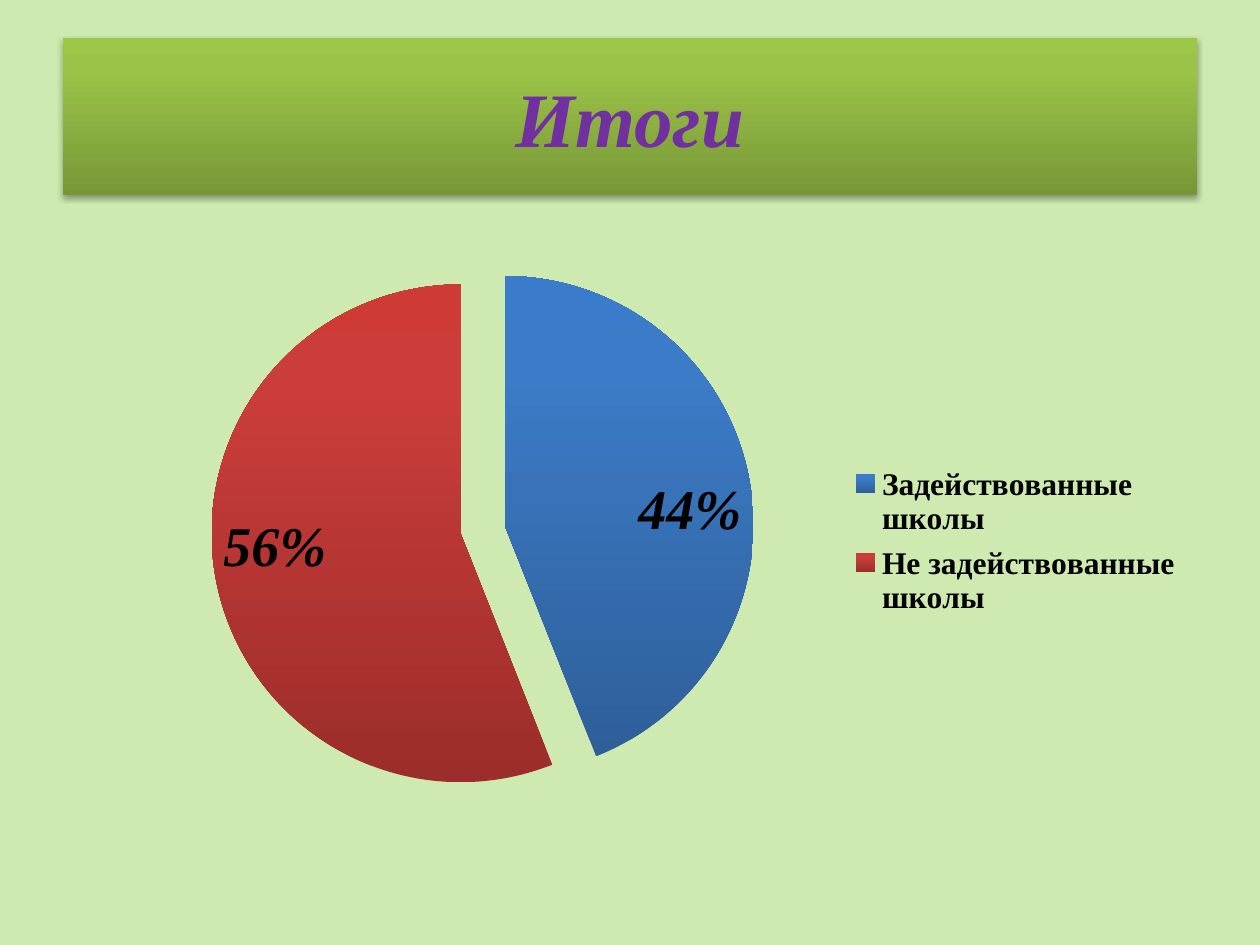
"""Build a results slide with a title banner and an exploded pie chart."""
import dataclasses

import lxml.etree
import pptx
import pptx.chart.data
import pptx.dml.color
import pptx.enum.chart
import pptx.enum.shapes
import pptx.enum.text
import pptx.oxml
import pptx.oxml.ns
import pptx.util

Pt = pptx.util.Pt
qn = pptx.oxml.ns.qn
nsdecls = pptx.oxml.ns.nsdecls


@dataclasses.dataclass(frozen=True)
class Theme:
    font: str = "Times New Roman"
    background: str = "CEEAB0"
    title: str = "7030A0"
    text: str = "000000"
    banner: tuple[str, str, str] = ("779737", "9BC348", "9DC746")
    title_size: int = 44
    label_size: int = 32
    legend_size: int = 18


@dataclasses.dataclass(frozen=True)
class Box:
    left: float
    top: float
    width: float
    height: float

    def lengths(self) -> tuple:
        return tuple(Pt(side) for side in dataclasses.astuple(self))


@dataclasses.dataclass(frozen=True)
class Slice:
    name: str
    percent: int
    shades: tuple[str, str, str]


THEME = Theme()
BANNER = Box(36, 21.6, 648, 90)
CHART = Box(36, 126, 648, 356.4)
PIE_SHARE = Box(0.13, 0.06, 0.48, 0.87)
LEGEND_SHARE = Box(0.69, 0.38, 0.3, 0.27)
EXPLOSION = 9
SLICES = (
    Slice("Задействованные школы", 44, ("2E5F99", "3C7BC7", "3A7CCB")),
    Slice("Не задействованные школы", 56, ("9B2D2A", "CB3D3A", "CE3B37")),
)


def rgb(code: str) -> pptx.dml.color.RGBColor:
    return pptx.dml.color.RGBColor.from_string(code)


def style_font(font, size: int, color: str, italic: bool) -> None:
    font.name = THEME.font
    font.size = Pt(size)
    font.bold = True
    font.italic = italic
    font.color.rgb = rgb(color)


def add_gradient(properties, shades: tuple[str, str, str]) -> None:
    stops = "".join(
        f'<a:gs pos="{share * 1000}"><a:srgbClr val="{shade}"/></a:gs>'
        for share, shade in zip((0, 80, 100), shades)
    )
    properties.append(pptx.oxml.parse_xml(
        f'<a:gradFill {nsdecls("a")} rotWithShape="1"><a:gsLst>{stops}</a:gsLst>'
        '<a:lin ang="16200000" scaled="0"/></a:gradFill>'
    ))


def add_shadow(properties) -> None:
    properties.append(pptx.oxml.parse_xml(
        f'<a:effectLst {nsdecls("a")}><a:outerShdw blurRad="{Pt(3.1)}" dist="{Pt(1.8)}" '
        'dir="5400000" rotWithShape="0"><a:srgbClr val="000000"><a:alpha val="35000"/>'
        '</a:srgbClr></a:outerShdw></a:effectLst>'
    ))


def set_layout(part, position: int, share: Box, target: str = "") -> None:
    for existing in part.findall(qn("c:layout")):
        part.remove(existing)
    layout = pptx.oxml.parse_xml(f'<c:layout {nsdecls("c")}><c:manualLayout/></c:layout>')
    settings = [("layoutTarget", target)] if target else []
    settings += [("xMode", "edge"), ("yMode", "edge")]
    settings += zip("xywh", dataclasses.astuple(share))
    for tag, value in settings:
        lxml.etree.SubElement(layout[0], qn(f"c:{tag}")).set("val", str(value))
    part.insert(position, layout)


def add_banner(slide, title: str) -> None:
    banner = slide.shapes.add_shape(
        pptx.enum.shapes.MSO_SHAPE.RECTANGLE, *BANNER.lengths()
    )
    add_gradient(banner.element.spPr, THEME.banner)
    add_shadow(banner.element.spPr)
    banner.line.fill.background()
    frame = banner.text_frame
    frame.text = title
    frame.word_wrap = True
    frame.vertical_anchor = pptx.enum.text.MSO_ANCHOR.MIDDLE
    heading = frame.paragraphs[0]
    heading.alignment = pptx.enum.text.PP_ALIGN.CENTER
    style_font(heading.runs[0].font, THEME.title_size, THEME.title, italic=True)


def add_pie(slide, slices: tuple[Slice, ...]) -> None:
    shares = pptx.chart.data.CategoryChartData()
    shares.categories = [part.name for part in slices]
    shares.add_series("Series 1", [part.percent for part in slices])
    chart = slide.shapes.add_chart(
        pptx.enum.chart.XL_CHART_TYPE.PIE, *CHART.lengths(), shares
    ).chart
    chart.has_title = False
    plot = chart.plots[0]
    plot.vary_by_categories = True

    pie = plot.series[0]._element
    for index, part in enumerate(slices):
        point = pie.get_or_add_dPt_for_point(index)
        add_gradient(point.get_or_add_spPr(), part.shades)
    explosion = pptx.oxml.parse_xml(f'<c:explosion {nsdecls("c")} val="{EXPLOSION}"/>')
    pie.find(qn("c:dPt")).addprevious(explosion)
    set_layout(chart._chartSpace.chart.plotArea, 0, PIE_SHARE, "inner")

    labels = plot.series[0].data_labels
    labels.show_percentage = True
    labels.show_value = False
    labels.number_format = "0%"
    labels.number_format_is_linked = False
    labels.position = pptx.enum.chart.XL_LABEL_POSITION.INSIDE_END
    style_font(labels.font, THEME.label_size, THEME.text, italic=True)

    chart.has_legend = True
    legend = chart.legend
    legend.position = pptx.enum.chart.XL_LEGEND_POSITION.RIGHT
    legend.include_in_layout = False
    style_font(legend.font, THEME.legend_size, THEME.text, italic=False)
    set_layout(legend._element, 1, LEGEND_SHARE)


def main() -> None:
    deck = pptx.Presentation()
    deck.slide_width, deck.slide_height = Pt(720), Pt(540)
    slide = deck.slides.add_slide(deck.slide_layouts[6])
    slide.background.fill.solid()
    slide.background.fill.fore_color.rgb = rgb(THEME.background)
    add_banner(slide, "Итоги")
    add_pie(slide, SLICES)
    deck.save("out.pptx")


if __name__ == "__main__":
    main()
